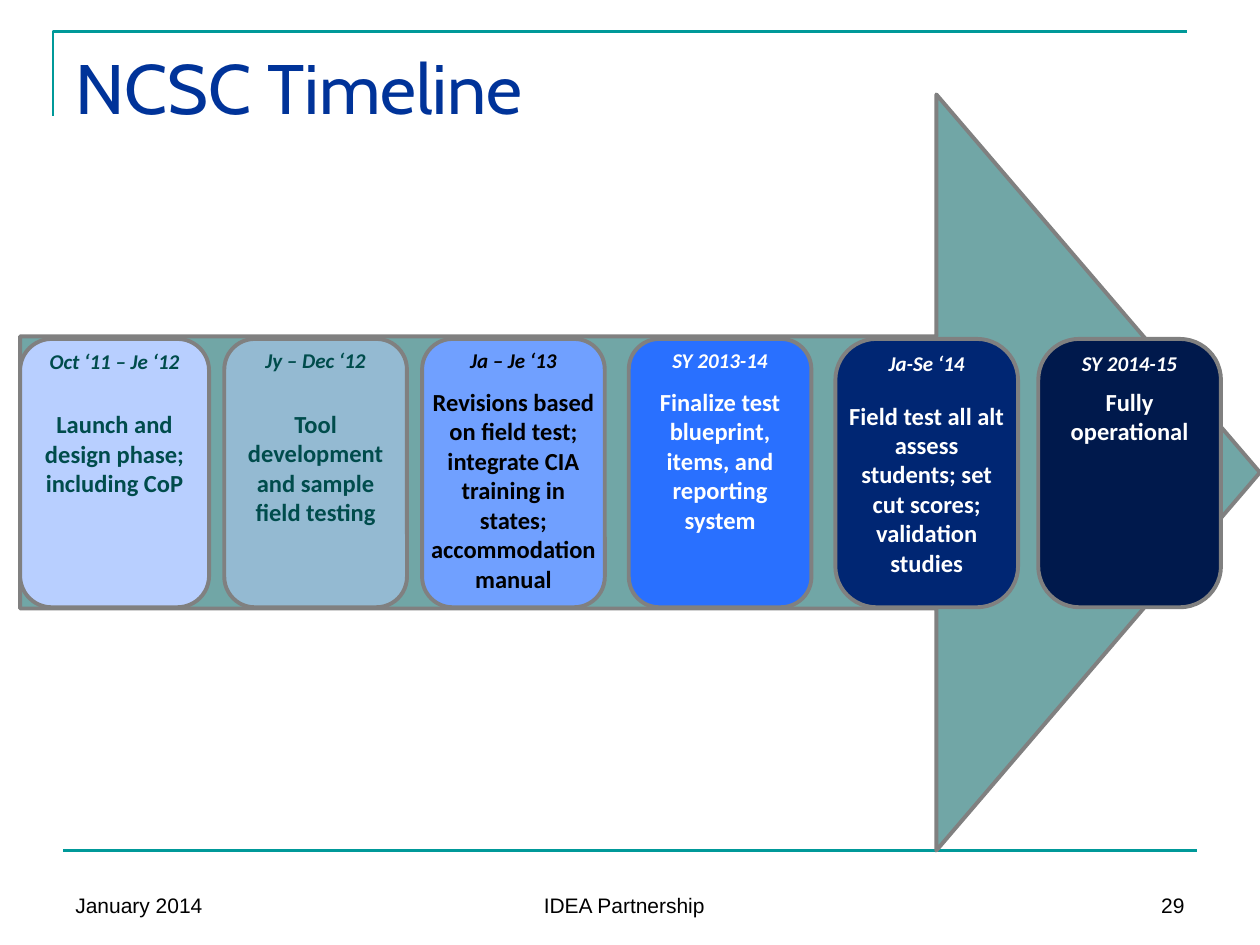
"""Build the NCSC timeline slide: a wide arrow carrying six dated phases."""
from lxml import etree
from pptx import Presentation
from pptx.dml.color import RGBColor
from pptx.enum.shapes import MSO_CONNECTOR, MSO_SHAPE
from pptx.enum.text import MSO_ANCHOR, MSO_AUTO_SIZE, PP_ALIGN
from pptx.oxml.ns import qn
from pptx.util import Inches, Pt

ARROW, ROUND = MSO_SHAPE.RIGHT_ARROW, MSO_SHAPE.ROUNDED_RECTANGLE
STRAIGHT = MSO_CONNECTOR.STRAIGHT
TOP, BOTTOM = MSO_ANCHOR.TOP, MSO_ANCHOR.BOTTOM
LEFT, MID, RIGHT = PP_ALIGN.LEFT, PP_ALIGN.CENTER, PP_ALIGN.RIGHT
FIXED = MSO_AUTO_SIZE.NONE

THEME = {
    "rule": "009999", "arrow": "71A6A6", "edge": "808080",
    "title": "003399", "teal": "004C4C", "black": "000000", "white": "FFFFFF",
    "head": 40, "date": 12, "body": 14, "foot": 12,
}


def color(name):
    return RGBColor.from_string(THEME.get(name, name))


def style(para, face, size, tint, align):
    para.alignment = align
    for run in para.runs:
        run.font.name = face
        run.font.size = Pt(THEME[size])
        run.font.color.rgb = color(tint)


deck = Presentation()
deck.slide_width, deck.slide_height = Inches(10), Inches(7.5)
slide = deck.slides.add_slide(deck.slide_layouts[5])
shapes = slide.shapes

pen = shapes.build_freeform(Inches(0.42), Inches(0.92))
pen.add_line_segments(
    [(Inches(0.42), Inches(0.25)), (Inches(9.42), Inches(0.25))], close=False)
frame = pen.convert_to_shape()
frame.shadow.inherit = False
frame.fill.background()

base = shapes.add_connector(
    STRAIGHT, Inches(0.5), Inches(6.75), Inches(9.5), Inches(6.75))
etree.SubElement(base.line._get_or_add_ln().getparent(), qn("a:effectLst"))
for rule in (frame, base):
    rule.line.color.rgb = color("rule")
    rule.line.width = Pt(1.5)

arrow = shapes.add_shape(
    ARROW, Inches(0.16), Inches(0.75), Inches(9.84), Inches(6))
arrow.adjustments[0], arrow.adjustments[1] = 0.36, 0.428
arrow.fill.solid()
arrow.fill.fore_color.rgb = color("arrow")
solid = [arrow]

phases = [
    (0.16, 1.5, 0.167, "B8CFFF", "teal", 20.5, "Oct ‘11 – Je ‘12",
     "Launch and design phase; including CoP"),
    (1.78, 1.45, 0.167, "B8CFFF", "teal", 20.5, "Jy – Dec ‘12",
     "Tool development and sample field testing"),
    (3.35, 1.45, 0.167, "70A0FF", "black", 8, "Ja – Je ‘13",
     "Revisions based on field test; integrate CIA training in states; "
     "accommodation manual"),
    (4.99, 1.45, 0.167, "2970FF", "white", 8, "SY 2013-14",
     "Finalize test blueprint, items, and reporting system"),
    (6.63, 1.45, 0.225, "002673", "white", 14, "Ja-Se ‘14",
     "Field test all alt assess students; set cut scores; validation studies"),
    (8.24, 1.45, 0.225, "00194C", "white", 6, "SY 2014-15",
     "Fully operational"),
]
for left, width, curve, fill, ink, gap, date, task in phases:
    card = shapes.add_shape(
        ROUND, Inches(left), Inches(2.69), Inches(width), Inches(2.13))
    card.adjustments[0] = curve
    card.fill.solid()
    card.fill.fore_color.rgb = color(fill)
    solid.append(card)
    text = card.text_frame
    text.word_wrap = True
    text.vertical_anchor = TOP
    text.margin_left = text.margin_right = 0
    text.margin_top = text.margin_bottom = 0
    text.text = f"{date}\n{task}"
    for para, size in zip(text.paragraphs, ("date", "body")):
        style(para, "Calibri", size, ink, MID)
        para.runs[0].font.bold = True
        para.runs[0].font.italic = size == "date"
    text.paragraphs[0].space_after = Pt(gap)

tint = solid[2].fill._xPr.find(qn("a:solidFill"))[0]
etree.SubElement(tint, qn("a:alpha")).set("val", "50000")

for shape in solid:
    shape.shadow.inherit = False
    shape.line.color.rgb = color("edge")
    shape.line.width = Pt(2.25)

title = shapes.title
title.left, title.top = Inches(0.5), Inches(0.3)
title.width, title.height = Inches(9), Inches(1.25)
title.text_frame.text = "NCSC Timeline"
title.text_frame.vertical_anchor = TOP
title.text_frame.auto_size = FIXED
style(title.text_frame.paragraphs[0], "Cabin", "head", "title", LEFT)
shapes._spTree.append(title._element)

feet = [(0.5, 2.33, "January 2014", LEFT),
        (3.37, 3.17, "IDEA Partnership", MID),
        (7.17, 2.33, "29", RIGHT)]
for left, width, words, align in feet:
    foot = shapes.add_textbox(
        Inches(left), Inches(6.83), Inches(width), Inches(0.5)).text_frame
    foot.word_wrap = True
    foot.vertical_anchor = BOTTOM
    foot.text = words
    style(foot.paragraphs[0], "Arial", "foot", "black", align)

deck.save("out.pptx")
